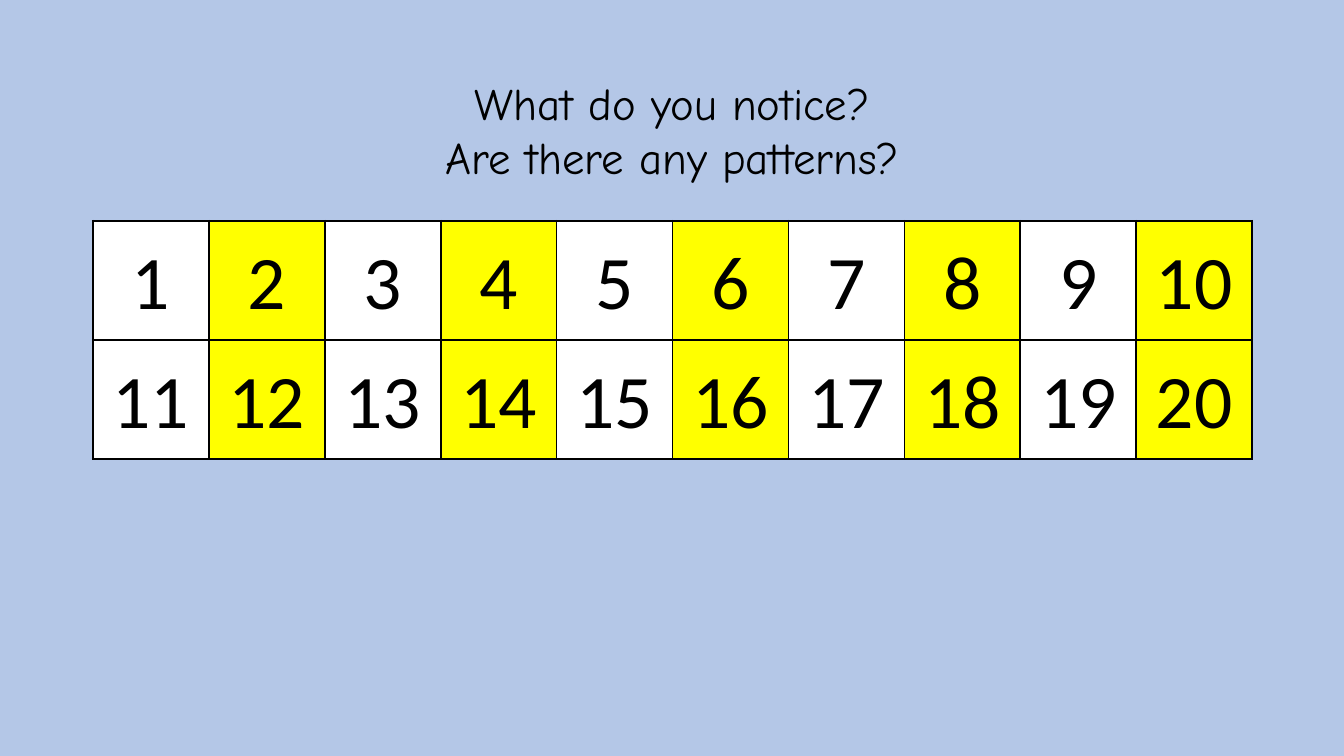
from dataclasses import dataclass

from lxml import etree
from pptx import Presentation
from pptx import util as u
from pptx.dml.color import RGBColor
from pptx.enum import text
from pptx.oxml import ns


@dataclass(frozen=True)
class Theme:
    background: str = "B4C7E7"
    ink: str = "000000"
    odd: str = "FFFFFF"
    even: str = "FFFF00"
    title_font: str = "Comic Neue"
    number_font: str = "Calibri"
    title_size: int = 32
    number_size: int = 54
    border_width: float = 1.5


class NumberSlide:
    def __init__(self, prs, theme):
        self.theme = theme
        self.s = prs.slides.add_slide(prs.slide_layouts[5])  # Title Only
        self.paint(self.s.background.fill, theme.background)

    def paint(self, fill, color):
        fill.solid()
        fill.fore_color.rgb = RGBColor.from_string(color)

    def add_text(self, p, content, font, size, spacing):
        for name, value in {"alignment": text.PP_ALIGN.CENTER,
                            "line_spacing": spacing}.items():
            setattr(p, name, value)
        r = p.add_run()
        r.text = content
        for name, value in {"name": font, "size": u.Pt(size), "bold": False}.items():
            setattr(r.font, name, value)
        r.font.color.rgb = RGBColor.from_string(self.theme.ink)

    def title(self, lines, left, top, width, height):
        sp = self.s.shapes.title
        box = {"left": left, "top": top, "width": width, "height": height}
        for name, value in box.items():
            setattr(sp, name, u.Inches(value))
        tf = sp.text_frame
        frame = {"word_wrap": True, "auto_size": text.MSO_AUTO_SIZE.NONE,
                 "vertical_anchor": text.MSO_ANCHOR.TOP}
        for name, value in frame.items():
            setattr(tf, name, value)
        for i, line in enumerate(lines):
            p = tf.add_paragraph() if i else tf.paragraphs[0]
            self.add_text(p, line, self.theme.title_font, self.theme.title_size, 1.0)

    def border(self, cell):
        tcPr = cell._tc.get_or_add_tcPr()
        for side in ("a:lnL", "a:lnR", "a:lnT", "a:lnB"):
            ln = etree.SubElement(tcPr, ns.qn(side),
                                  w=str(u.Pt(self.theme.border_width)))
            fill = etree.SubElement(ln, ns.qn("a:solidFill"))
            etree.SubElement(fill, ns.qn("a:srgbClr"), val=self.theme.ink)

    def number_grid(self, rows, cols, left, top, cell_width, cell_height):
        table = self.s.shapes.add_table(
            rows, cols, u.Inches(left), u.Inches(top),
            u.Inches(cols * cell_width), u.Inches(rows * cell_height)).table
        table.first_row = table.horz_banding = False
        layout = {"vertical_anchor": text.MSO_ANCHOR.MIDDLE,
                  "margin_left": u.Inches(0.07), "margin_right": u.Inches(0.07),
                  "margin_top": 0, "margin_bottom": 0}
        for number, cell in enumerate(table.iter_cells(), start=1):
            for name, value in layout.items():
                setattr(cell, name, value)
            self.add_text(cell.text_frame.paragraphs[0], str(number),
                          self.theme.number_font, self.theme.number_size, 1.07)
            # Borders come before the fill in the cell properties
            self.border(cell)
            self.paint(cell.fill, self.theme.odd if number % 2 else self.theme.even)


def main():
    prs = Presentation()
    prs.slide_width, prs.slide_height = u.Inches(13.33), u.Inches(7.5)
    slide = NumberSlide(prs, Theme())

    # Questions
    slide.title(["What do you notice?", "Are there any patterns?"],
                1, 0.7, 11.34, 1.72)

    # Numbers 1 to 20, even ones highlighted
    slide.number_grid(2, 10, 0.92, 2.19, 1.15, 1.18)

    prs.save("out.pptx")


if __name__ == "__main__":
    main()
